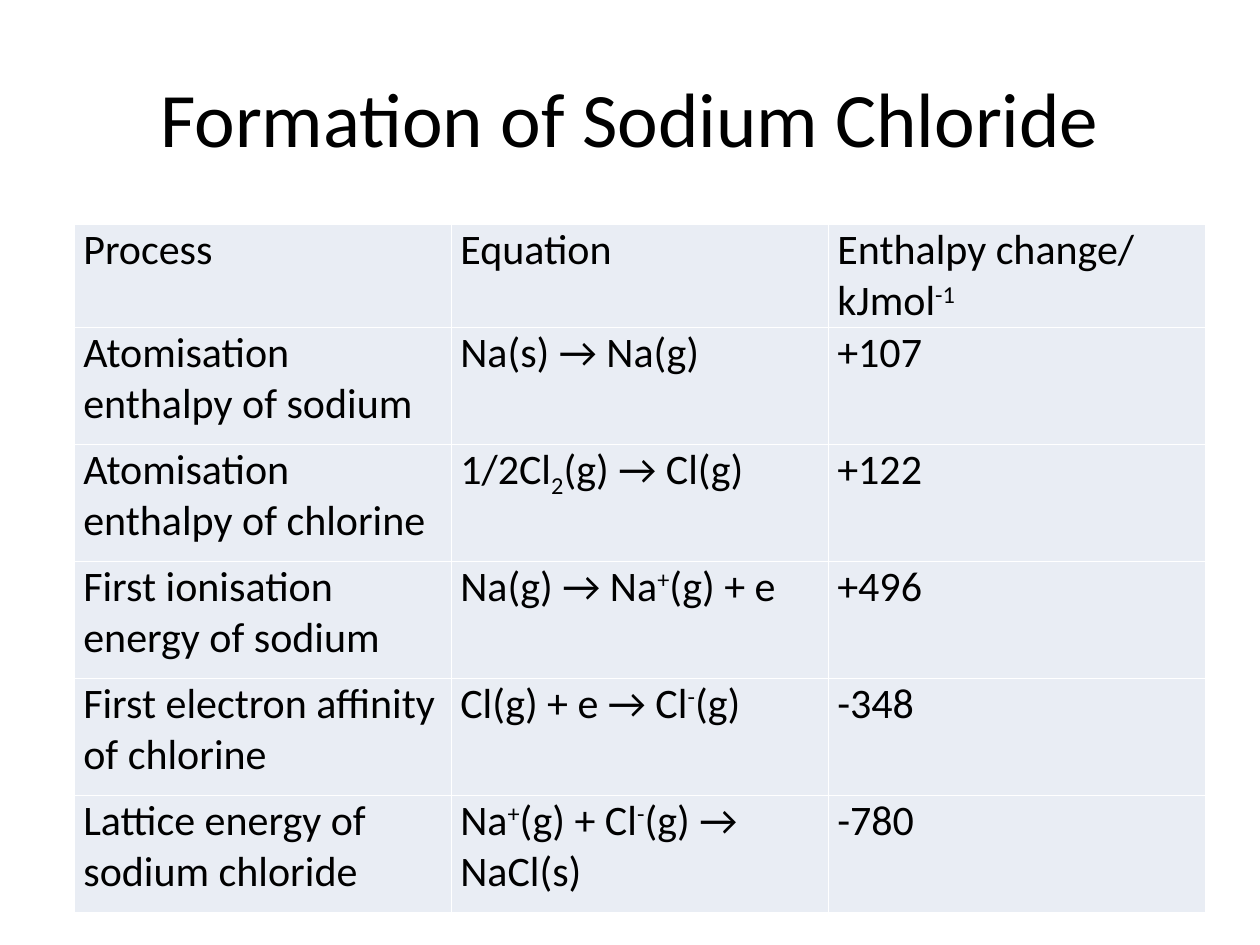
from pptx import Presentation
from pptx.dml.color import RGBColor
from pptx.enum.text import MSO_ANCHOR, PP_ALIGN
from pptx.oxml import parse_xml
from pptx.oxml.ns import nsdecls
from pptx.util import Cm, Pt

FONT = "Calibri"
BLACK, WHITE, PALE_BLUE = "000000", "FFFFFF", "E9EDF4"
BASELINES = {"^": "30000", "_": "-25000"}
ROWS = [
    ("Process", "Equation", "Enthalpy change/ kJmol|^-1"),
    ("Atomisation enthalpy of sodium", "Na(s) → Na(g)", "+107"),
    ("Atomisation enthalpy of chlorine", "1/2Cl|_2|(g) → Cl(g)", "+122"),
    ("First ionisation energy of sodium", "Na(g) → Na|^+|(g) + e", "+496"),
    ("First electron affinity of chlorine", "Cl(g) + e → Cl|^-|(g)", "-348"),
    ("Lattice energy of sodium chloride",
     "Na|^+|(g) + Cl|^-|(g) → NaCl(s)", "-780"),
]


def rgb(value):
    return RGBColor.from_string(value)


def format_run(r, size):
    r.font.name = FONT
    r.font.size = Pt(size)
    r.font.bold = False
    r.font.color.rgb = rgb(BLACK)


def add_title(s, text):
    title = s.shapes.title
    title.left, title.top = Cm(1.27), Cm(0.76)
    title.width, title.height = Cm(22.86), Cm(3.18)
    tf = title.text_frame
    tf.text = text
    tf.vertical_anchor = MSO_ANCHOR.MIDDLE
    p = tf.paragraphs[0]
    p.alignment = PP_ALIGN.CENTER
    format_run(p.runs[0], 44)


def add_formula(p, formula):
    for part in formula.split("|"):
        r = p.add_run()
        r.text = part.lstrip("^_")
        format_run(r, 24)
        if part[0] in BASELINES:
            r.font._element.set("baseline", BASELINES[part[0]])


def set_borders(cell, color, width):
    tc_pr = cell._tc.get_or_add_tcPr()
    for side in ("lnL", "lnR", "lnT", "lnB"):
        tc_pr.append(parse_xml(
            f'<a:{side} {nsdecls("a")} w="{Pt(width)}"><a:solidFill>'
            f'<a:srgbClr val="{color}"/></a:solidFill></a:{side}>'))


def fill_cell(cell, formula):
    cell.margin_left = cell.margin_right = Cm(0.18)
    cell.margin_top = cell.margin_bottom = 0
    set_borders(cell, WHITE, 1)
    cell.fill.solid()
    cell.fill.fore_color.rgb = rgb(PALE_BLUE)
    add_formula(cell.text_frame.paragraphs[0], formula)


def add_enthalpy_table(s):
    table = s.shapes.add_table(len(ROWS), len(ROWS[0]), Cm(1.5), Cm(4.53),
                               Cm(22.8), Cm(13)).table
    table.first_row = table.horz_banding = False
    for column in table.columns:
        column.width = Cm(7.6)
    for i, formulas in enumerate(ROWS):
        table.rows[i].height = Cm(2.36 if i else 1.2)
        for j, formula in enumerate(formulas):
            fill_cell(table.cell(i, j), formula)


def main():
    prs = Presentation()
    prs.slide_width, prs.slide_height = Cm(25.4), Cm(19.05)
    s = prs.slides.add_slide(prs.slide_layouts[5])
    add_title(s, "Formation of Sodium Chloride")
    add_enthalpy_table(s)
    prs.save("out.pptx")


if __name__ == "__main__":
    main()
